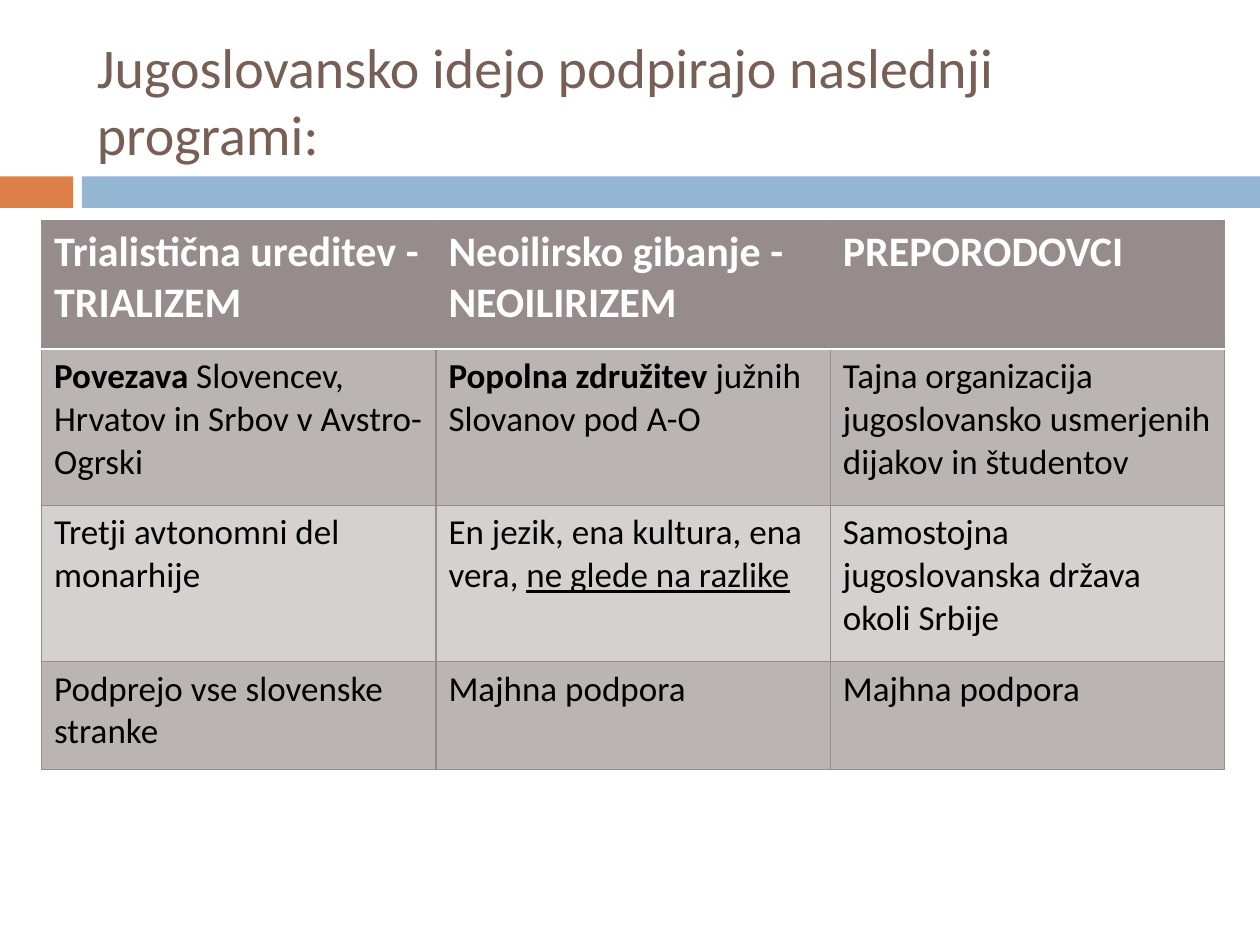
from lxml import etree
from pptx import Presentation
from pptx.dml.color import RGBColor
from pptx.enum.shapes import MSO_SHAPE
from pptx.enum.text import MSO_ANCHOR
from pptx.oxml.ns import qn
from pptx.util import Inches, Pt

RECTANGLE = MSO_SHAPE.RECTANGLE
MIDDLE = MSO_ANCHOR.MIDDLE
FONT = "Calibri"
WHITE, BLACK, BROWN = "FFFFFF", "000000", "775F55"
ORANGE, BLUE = "DD8047", "94B6D2"
HEADER_FILL, DARK_BAND, LIGHT_BAND = "968C8C", "BAB4B4", "D4D1D0"
ROW_HEIGHTS = [1.02, 1.24, 1.24, 0.86]
PROGRAMS = [
    ["Trialistična ureditev - TRIALIZEM", "Neoilirsko gibanje - NEOILIRIZEM", "PREPORODOVCI"],
    [
        [("Povezava", "bold"), (" Slovencev, Hrvatov in Srbov v Avstro-Ogrski", None)],
        [("Popolna združitev ", "bold"), ("južnih Slovanov pod A-O", None)],
        "Tajna organizacija jugoslovansko usmerjenih dijakov in študentov",
    ],
    [
        "Tretji avtonomni del monarhije",
        [("En jezik, ena kultura, ena vera, ", None), ("ne glede na razlike", "underline")],
        "Samostojna jugoslovanska država okoli Srbije",
    ],
    ["Podprejo vse slovenske stranke", "Majhna podpora", "Majhna podpora"],
]


def color(value):
    """Turn a hex string into a colour."""
    return RGBColor.from_string(value)


def style_font(paragraph, size, hex_color, bold=False):
    """Set the shared font of a paragraph."""
    font = paragraph.font
    font.name, font.size, font.bold = FONT, Pt(size), bold
    font.color.rgb = color(hex_color)


def add_title(slide, text, left, top, width, height):
    """Place the slide title, centred vertically in its box."""
    shape = slide.shapes.add_textbox(Inches(left), Inches(top), Inches(width), Inches(height))
    frame = shape.text_frame
    frame.word_wrap = True
    frame.vertical_anchor = MIDDLE
    frame.text = text
    style_font(frame.paragraphs[0], 32, BROWN)


def add_divider(slide, left, top, width, height, accent=0.58, gap=0.07):
    """Draw the short accent bar and the long bar beside it."""
    long_left = left + accent + gap
    bars = [(left, accent, ORANGE), (long_left, left + width - long_left, BLUE)]
    for bar_left, bar_width, fill in bars:
        shape = slide.shapes.add_shape(
            RECTANGLE, Inches(bar_left), Inches(top), Inches(bar_width), Inches(height)
        )
        shape.shadow.inherit = False
        shape.fill.solid()
        shape.fill.fore_color.rgb = color(fill)
        shape.line.fill.background()


def set_borders(cell, top, bottom):
    """Draw the cell's sides in the table colour, with the given top and bottom."""
    side = (HEADER_FILL, 0.79)
    properties = cell._tc.get_or_add_tcPr()
    for tag, (hex_color, width) in zip(("lnL", "lnR", "lnT", "lnB"), (side, side, top, bottom)):
        line = etree.SubElement(properties, qn(f"a:{tag}"), w=str(Pt(width)))
        fill = etree.SubElement(line, qn("a:solidFill"))
        etree.SubElement(fill, qn("a:srgbClr"), val=hex_color)


def fill_cell(cell, content, row):
    """Write one table cell and give it the look of its row."""
    paragraph = cell.text_frame.paragraphs[0]
    runs = [(content, None)] if isinstance(content, str) else content
    for text, emphasis in runs:
        run = paragraph.add_run()
        run.text = text
        if emphasis:
            setattr(run.font, emphasis, True)
    header = row == 0
    style_font(paragraph, 24 if header else 20, WHITE if header else BLACK, header)
    thin, rule = (HEADER_FILL, 0.79), (WHITE, 1.5)
    set_borders(cell, rule if row == 1 else thin, rule if header else thin)
    cell.fill.solid()
    band = DARK_BAND if row % 2 else LIGHT_BAND
    cell.fill.fore_color.rgb = color(HEADER_FILL if header else band)


def add_program_table(slide, left, top, width, height):
    """Place the table comparing the three programmes."""
    table = slide.shapes.add_table(
        len(PROGRAMS), len(PROGRAMS[0]), Inches(left), Inches(top), Inches(width), Inches(height)
    ).table
    for row, contents in enumerate(PROGRAMS):
        table.rows[row].height = Inches(height * ROW_HEIGHTS[row] / sum(ROW_HEIGHTS))
        for column, content in enumerate(contents):
            fill_cell(table.cell(row, column), content, row)


def main():
    """Build and save the slide."""
    presentation = Presentation()
    presentation.slide_width, presentation.slide_height = Inches(10), Inches(7.5)
    slide = presentation.slides.add_slide(presentation.slide_layouts[6])
    add_divider(slide, 0, 1.4, 10, 0.25)
    add_title(slide, "Jugoslovansko idejo podpirajo naslednji programi:", 0.67, 0.25, 8.92, 1.08)
    add_program_table(slide, 0.33, 1.75, 9.39, 4.36)
    presentation.save("out.pptx")


if __name__ == "__main__":
    main()
